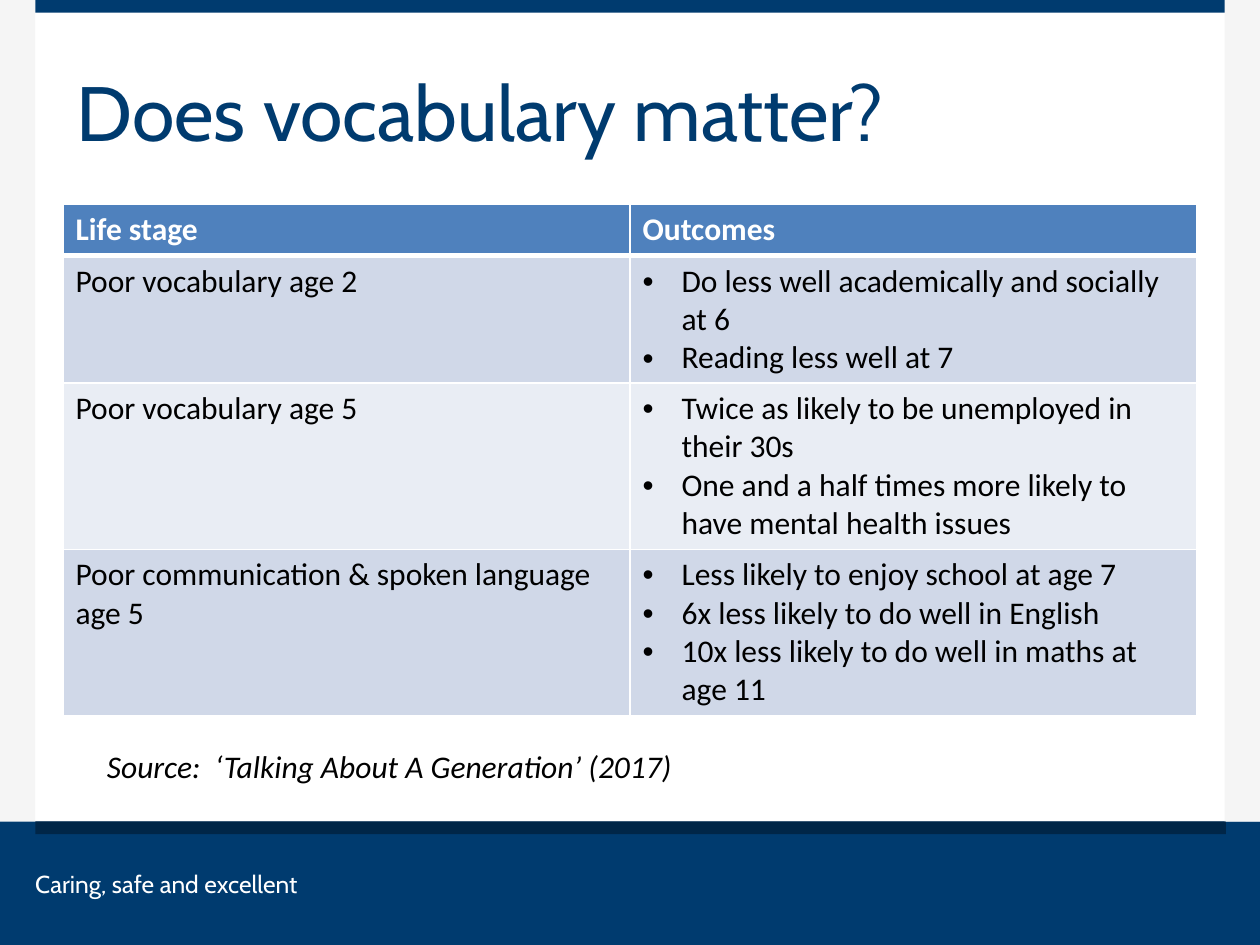
from dataclasses import dataclass
from typing import NamedTuple

from lxml.etree import SubElement
from pptx import Presentation
from pptx.dml.color import RGBColor
from pptx.enum.shapes import MSO_SHAPE as Shape
from pptx.enum.text import MSO_ANCHOR as Anchor
from pptx.oxml.ns import qn
from pptx.util import Inches, Pt


@dataclass(frozen=True)
class Theme:
    navy: str = "003B6F"
    shade: str = "002648"
    side: str = "F5F5F5"
    white: str = "FFFFFF"
    black: str = "000000"
    head: str = "4F81BD"
    bands: tuple = ("D0D8E8", "E9EDF4")
    brand: str = "Cabin"
    body: str = "Calibri"
    big: int = 44
    mid: int = 18
    small: int = 14


class Box(NamedTuple):
    left: float
    top: float
    width: float
    height: float

    def emu(self) -> list:
        return [Inches(v) for v in self]


class Style(NamedTuple):
    font: str
    size: int
    color: str
    bold: bool = False
    italic: bool = False


class Bar(NamedTuple):
    box: Box
    color: str


class Label(NamedTuple):
    box: Box
    text: str
    style: Style
    inset: bool = True
    anchor: Anchor = Anchor.TOP
    wrap: bool = True


class Stage(NamedTuple):
    name: str
    height: float
    results: tuple


T = Theme()
EDGE, WIDE, FOOT = 0.28, 10, 6.52
INNER = 9.45

BARS = (
    Bar(Box(0, 0, EDGE, FOOT), T.side),
    Bar(Box(0, FOOT, WIDE, 0.98), T.navy),
    Bar(Box(EDGE, FOOT, INNER, 0.1), T.shade),
    Bar(Box(EDGE, 0, INNER, 0.1), T.navy),
    Bar(Box(WIDE - EDGE, 0, EDGE, FOOT), T.side),
)
LABELS = (
    Label(Box(EDGE, 6.9, 3.07, 0.24), "Caring, safe and excellent",
          Style(T.brand, T.small, T.white), inset=False),
    Label(Box(0.51, 0.25, 9, 1.26), "Does vocabulary matter?",
          Style(T.brand, T.big, T.navy), anchor=Anchor.MIDDLE),
    Label(Box(0.75, 5.88, 5.91, 0.4),
          "Source:  ‘Talking About A Generation’ (2017)",
          Style(T.body, T.mid, T.black, italic=True)),
)
GRID = Box(0.5, 1.62, 9, 4.06)
HEADS = ("Life stage", "Outcomes")
HEAD_H = 0.41
STAGES = (
    Stage("Poor vocabulary age 2", 1.01, (
        "Do less well academically and socially at 6",
        "Reading less well at 7")),
    Stage("Poor vocabulary age 5", 1.32, (
        "Twice as likely to be unemployed in their 30s",
        "One and a half times more likely to have mental health issues")),
    Stage("Poor communication & spoken language age 5", 1.32, (
        "Less likely to enjoy school at age 7",
        "6x less likely to do well in English",
        "10x less likely to do well in maths at age 11")),
)


def rgb(code: str) -> RGBColor:
    return RGBColor.from_string(code)


def style_text(frame, style: Style) -> None:
    for para in frame.paragraphs:
        for run in para.runs:
            font = run.font
            font.name, font.size = style.font, Pt(style.size)
            font.bold, font.italic = style.bold, style.italic
            font.color.rgb = rgb(style.color)


def add_bar(slide, bar: Bar) -> None:
    shape = slide.shapes.add_shape(Shape.RECTANGLE, *bar.box.emu())
    shape.shadow.inherit = False
    shape.fill.solid()
    shape.fill.fore_color.rgb = rgb(bar.color)
    shape.line.fill.background()


def add_label(slide, label: Label) -> None:
    frame = slide.shapes.add_textbox(*label.box.emu()).text_frame
    frame.word_wrap = label.wrap
    frame.vertical_anchor = label.anchor
    if not label.inset:
        frame.margin_left = frame.margin_right = 0
        frame.margin_top = frame.margin_bottom = 0
    frame.text = label.text
    style_text(frame, label.style)


def add_bullet(para) -> None:
    props = para._p.get_or_add_pPr()
    props.set("marL", str(Inches(0.31)))
    props.set("indent", str(-Inches(0.31)))
    SubElement(props, qn("a:buFont"), typeface="Arial")
    SubElement(props, qn("a:buChar"), char="•")


def set_edges(cell, above: int, below: int) -> None:
    """Draw white cell borders; above and below are widths in points."""
    props = cell._tc.get_or_add_tcPr()
    for side, width in zip("LRTB", (1, 1, above, below)):
        line = SubElement(props, qn(f"a:ln{side}"), w=str(Pt(width)))
        fill = SubElement(line, qn("a:solidFill"))
        SubElement(fill, qn("a:srgbClr"), val=T.white)


def fill_cell(cell, text: str, fill: str, style: Style,
              above: int = 1, below: int = 1) -> None:
    set_edges(cell, above, below)
    cell.fill.solid()
    cell.fill.fore_color.rgb = rgb(fill)
    cell.text_frame.text = text
    style_text(cell.text_frame, style)


def add_grid(slide) -> None:
    table = slide.shapes.add_table(
        len(STAGES) + 1, len(HEADS), *GRID.emu()).table
    table.rows[0].height = Inches(HEAD_H)
    bold = Style(T.body, T.mid, T.white, bold=True)
    for col, head in enumerate(HEADS):
        fill_cell(table.cell(0, col), head, T.head, bold, below=3)

    plain = Style(T.body, T.mid, T.black)
    for row, stage in enumerate(STAGES, 1):
        table.rows[row].height = Inches(stage.height)
        fill = T.bands[(row - 1) % 2]
        above = 3 if row == 1 else 1
        for col, text in enumerate((stage.name, "\n".join(stage.results))):
            fill_cell(table.cell(row, col), text, fill, plain, above)
        for para in table.cell(row, 1).text_frame.paragraphs:
            add_bullet(para)


def main() -> None:
    deck = Presentation()
    deck.slide_width, deck.slide_height = Inches(WIDE), Inches(7.5)
    slide = deck.slides.add_slide(deck.slide_layouts[6])
    for bar in BARS:
        add_bar(slide, bar)
    foot, title, source = LABELS
    add_label(slide, foot)
    add_label(slide, title)
    add_grid(slide)
    add_label(slide, source)
    deck.save("out.pptx")


if __name__ == "__main__":
    main()
